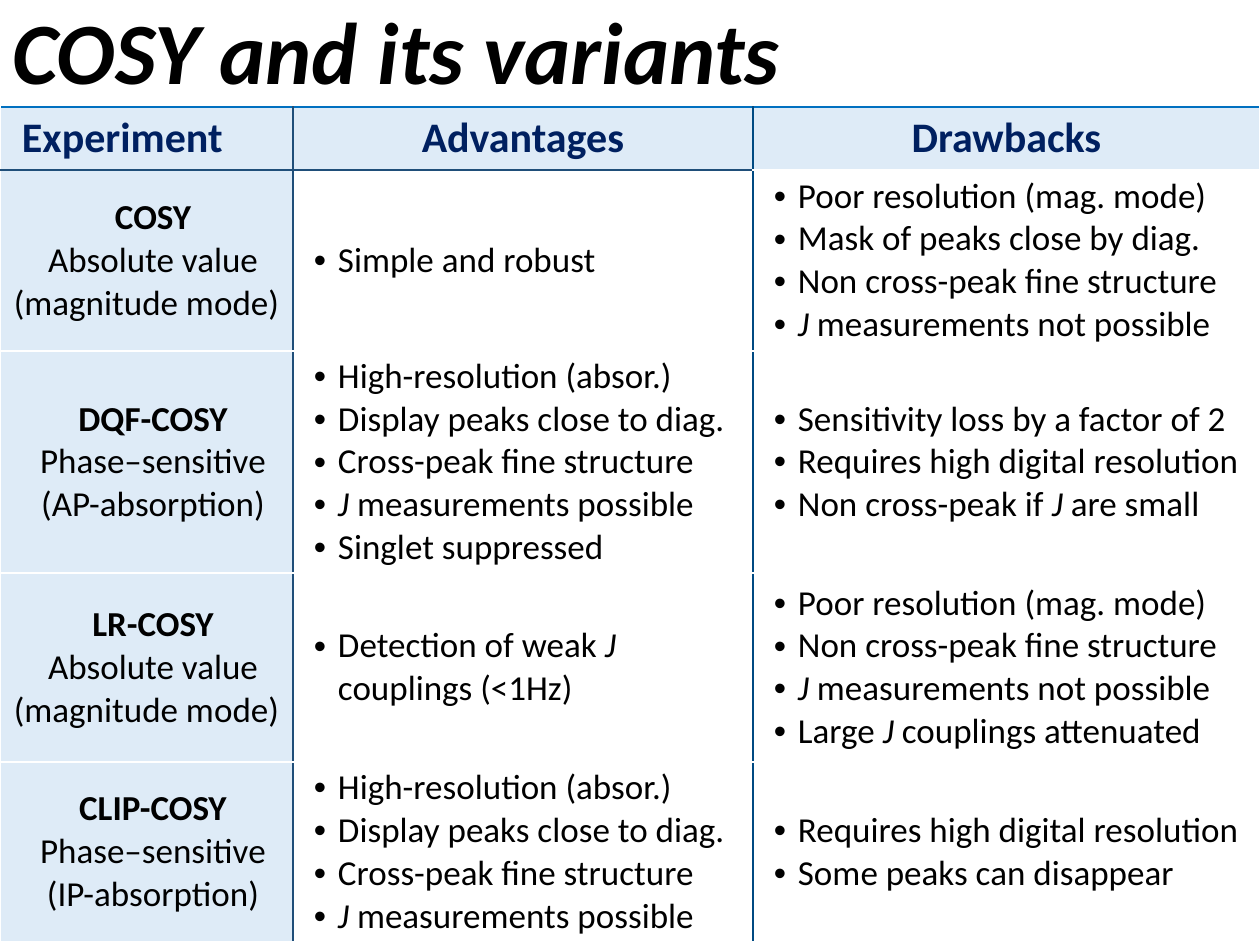
from typing import NamedTuple

from lxml import etree
from pptx import Presentation
from pptx.dml.color import RGBColor
from pptx.enum.text import MSO_ANCHOR, PP_ALIGN
from pptx.oxml.ns import qn
from pptx.util import Pt

PX = 914400 // 126
FONT = "Calibri"
MIDDLE = MSO_ANCHOR.MIDDLE
LEFT, CENTER = PP_ALIGN.LEFT, PP_ALIGN.CENTER
COLORS = {
    "text": "000000",
    "heading": "002060",
    "band": "DEEBF7",
    "white": "FFFFFF",
    "top": "0070C0",
    "rule": "1F4E79",
    "divider": "004A82",
}
COL_WIDTHS = (293, 460, 507)
ROW_HEIGHTS = (63, 181, 222, 189, 180)
HEADERS = ("Experiment", "Advantages", "Drawbacks")


class Experiment(NamedTuple):
    name: str
    mode: tuple[str, ...]
    advantages: tuple[str, ...]
    drawbacks: tuple[str, ...]


MAGNITUDE = ("Absolute value (magnitude mode)",)
HIGH_RES = (
    "High-resolution (absor.)",
    "Display peaks close to diag.",
    "Cross-peak fine structure",
    "*J* measurements possible",
)
POOR_RES = "Poor resolution (mag. mode)"
NO_FINE = "Non cross-peak fine structure"
NO_J = "*J* measurements not possible"
DIGITAL = "Requires high digital resolution"

EXPERIMENTS = (
    Experiment("COSY", MAGNITUDE, ("Simple and robust",),
               (POOR_RES, "Mask of peaks close by diag.", NO_FINE, NO_J)),
    Experiment("DQF-COSY", ("Phase–sensitive", "(AP-absorption)"),
               HIGH_RES + ("Singlet suppressed",),
               ("Sensitivity loss by a factor of 2", DIGITAL,
                "Non cross-peak if *J* are small")),
    Experiment("LR-COSY", MAGNITUDE, ("Detection of weak *J *couplings (<1Hz)",),
               (POOR_RES, NO_FINE, NO_J, "Large *J* couplings attenuated")),
    Experiment("CLIP-COSY", ("Phase–sensitive", "(IP-absorption)"), HIGH_RES,
               (DIGITAL, "Some peaks can disappear")),
)


def format_run(r, size: int, color: str, bold: bool, italic: bool = False) -> None:
    r.font.name = FONT
    r.font.size = Pt(size)
    r.font.bold = bold
    r.font.italic = italic
    r.font.color.rgb = RGBColor.from_string(COLORS[color])


def set_indent(p, left: int, first: int) -> None:
    pPr = p._p.get_or_add_pPr()
    pPr.set("marL", str(left * PX))
    pPr.set("indent", str(first * PX))


def fill_header(cell, text: str, align) -> None:
    cell.text_frame.text = text
    p = cell.text_frame.paragraphs[0]
    p.alignment = align
    if align == LEFT:
        set_indent(p, 0, 13)
    format_run(p.runs[0], 24, "heading", True)


def fill_name(cell, experiment: Experiment) -> None:
    tf = cell.text_frame
    tf.text = "\n".join((experiment.name, *experiment.mode))
    for i, p in enumerate(tf.paragraphs):
        p.alignment = CENTER
        set_indent(p, 0, 13)
        format_run(p.runs[0], 20, "text", i == 0)


def fill_bullets(cell, items: tuple[str, ...]) -> None:
    tf = cell.text_frame
    for i, item in enumerate(items):
        p = tf.add_paragraph() if i else tf.paragraphs[0]
        set_indent(p, 36, -24)
        pPr = p._p.get_or_add_pPr()
        etree.SubElement(pPr, qn("a:buFont")).set("typeface", "Arial")
        etree.SubElement(pPr, qn("a:buChar")).set("char", "•")
        for j, part in enumerate(item.split("*")):
            if part:
                r = p.add_run()
                r.text = part
                format_run(r, 20, "text", False, j % 2 == 1)


def cell_borders(row: int, col: int) -> dict[str, str]:
    if col == 2:
        return {"L": "divider", "T": "top"} if row == 0 else {"L": "divider"}
    return {
        "L": ("white", "rule")[col],
        "R": ("rule", "divider")[col],
        "T": ("top", "rule")[row] if row < 2 else "white",
        "B": "rule" if row == 0 else "white",
    }


def style_cell(cell, row: int, col: int) -> None:
    cell.vertical_anchor = MIDDLE
    cell.margin_left = cell.margin_right = 9 * PX
    cell.margin_top = cell.margin_bottom = 4 * PX
    tcPr = cell._tc.get_or_add_tcPr()
    for side, color in cell_borders(row, col).items():
        ln = etree.SubElement(tcPr, qn(f"a:ln{side}"), w=str(Pt(1)))
        solid = etree.SubElement(ln, qn("a:solidFill"))
        etree.SubElement(solid, qn("a:srgbClr"), val=COLORS[color])
    if row == 0 or col == 0:
        cell.fill.solid()
        cell.fill.fore_color.rgb = RGBColor.from_string(COLORS["band"])
    else:
        cell.fill.background()


def add_title(s, text: str) -> None:
    tf = s.shapes.add_textbox(0, -9 * PX, 1262 * PX, 118 * PX).text_frame
    tf.word_wrap = True
    tf.text = text
    format_run(tf.paragraphs[0].runs[0], 50, "text", True, True)


def add_comparison(s) -> None:
    table = s.shapes.add_table(
        len(ROW_HEIGHTS), len(COL_WIDTHS), 0, 107 * PX,
        sum(COL_WIDTHS) * PX, sum(ROW_HEIGHTS) * PX).table
    table.first_row = table.horz_banding = False
    for column, width in zip(table.columns, COL_WIDTHS):
        column.width = width * PX
    for i, height in enumerate(ROW_HEIGHTS):
        table.rows[i].height = height * PX
        for j in range(len(COL_WIDTHS)):
            style_cell(table.cell(i, j), i, j)
    for j, header in enumerate(HEADERS):
        fill_header(table.cell(0, j), header, CENTER if j else LEFT)
    for i, experiment in enumerate(EXPERIMENTS, start=1):
        fill_name(table.cell(i, 0), experiment)
        fill_bullets(table.cell(i, 1), experiment.advantages)
        fill_bullets(table.cell(i, 2), experiment.drawbacks)


def main() -> None:
    prs = Presentation()
    prs.slide_width, prs.slide_height = 1260 * PX, 945 * PX
    s = prs.slides.add_slide(prs.slide_layouts[6])
    add_title(s, "COSY and its variants")
    add_comparison(s)
    prs.save("out.pptx")


if __name__ == "__main__":
    main()
